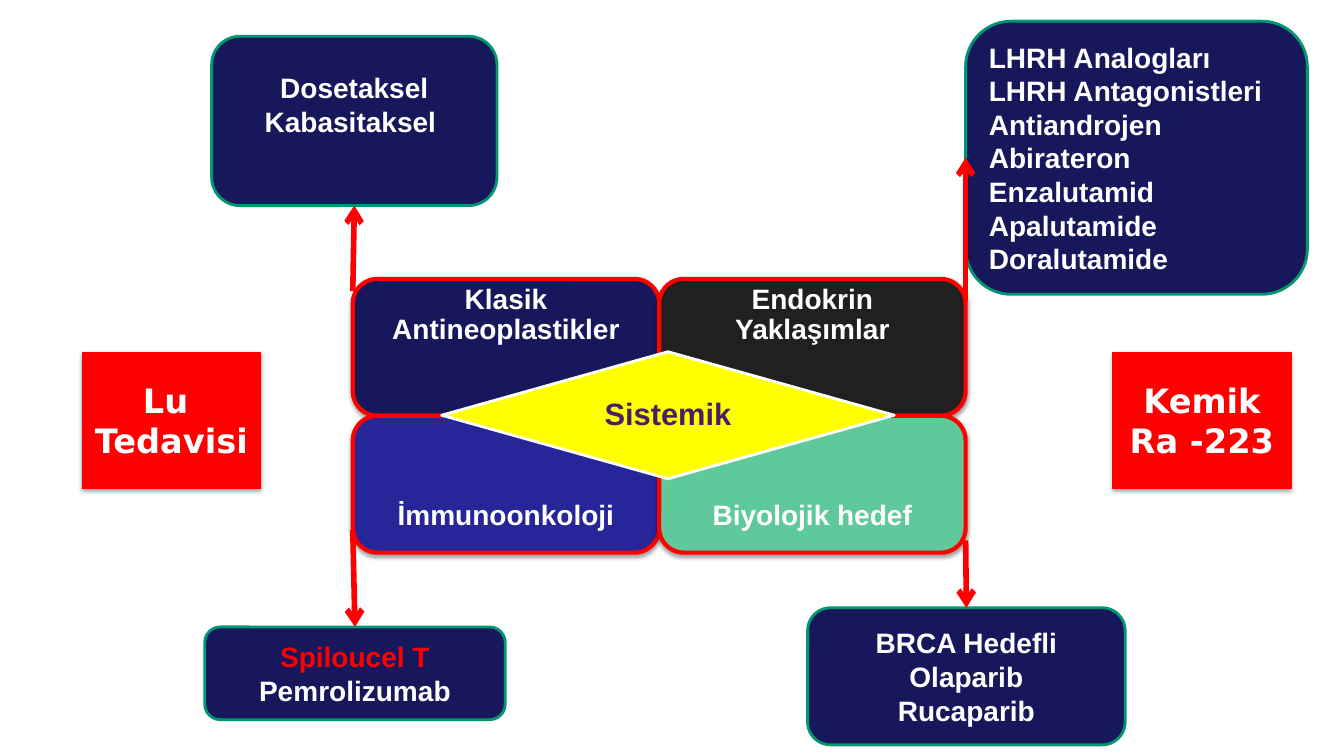
from lxml import etree
from pptx import Presentation
from pptx.dml.color import RGBColor
from pptx.enum.shapes import MSO_CONNECTOR, MSO_SHAPE
from pptx.enum.text import MSO_ANCHOR, PP_ALIGN
from pptx.oxml.ns import qn
from pptx.util import Inches, Pt

ROUNDED = MSO_SHAPE.ROUNDED_RECTANGLE
DIAMOND = MSO_SHAPE.DIAMOND
CALLOUT = MSO_SHAPE.LINE_CALLOUT_1_BORDER_AND_ACCENT_BAR
STRAIGHT = MSO_CONNECTOR.STRAIGHT
LEFT, CENTER = PP_ALIGN.LEFT, PP_ALIGN.CENTER
MIDDLE = MSO_ANCHOR.MIDDLE
TOP_SIDE, LEFT_SIDE, BOTTOM_SIDE = 0, 1, 2
COLORS = {
    "navy": "17175C", "black": "202020", "blue": "262699", "mint": "60C99C",
    "red": "FF0000", "yellow": "FFFF00", "white": "FFFFFF", "green": "009771",
    "purple": "481F67", "shadow": "000000",
}


class TreatmentSlide:
    """Draws the treatment map, with places given in percent of the slide."""

    def __init__(self, presentation):
        self.width = presentation.slide_width
        self.height = presentation.slide_height
        self.slide = presentation.slides.add_slide(presentation.slide_layouts[6])

    def point(self, x, y):
        return round(self.width * x / 100), round(self.height * y / 100)

    def color(self, name):
        return RGBColor.from_string(COLORS[name])

    def block(self, kind, place, fill, line=None, line_width=2):
        left, top, width, height = place
        shape = self.slide.shapes.add_shape(
            kind, *self.point(left, top), *self.point(width, height))
        shape.shadow.inherit = False
        shape.fill.solid()
        shape.fill.fore_color.rgb = self.color(fill)
        if line:
            shape.line.color.rgb = self.color(line)
            shape.line.width = Pt(line_width)
        else:
            shape.line.fill.background()
        return shape

    def label(self, shape, lines, size=20, font="Arial", color="white",
              align=CENTER, spacing=1.0, insets=(0.1, 0.05, 0.1, 0.05)):
        frame = shape.text_frame
        frame.text = "\n".join(lines)
        frame.word_wrap = True
        frame.vertical_anchor = MIDDLE
        (frame.margin_left, frame.margin_top,
         frame.margin_right, frame.margin_bottom) = map(Inches, insets)
        for paragraph in frame.paragraphs:
            paragraph.alignment = align
            paragraph.line_spacing = spacing
            for run in paragraph.runs:
                run.font.name = font
                run.font.size = Pt(size)
                run.font.bold = True
                run.font.color.rgb = self.color(color)

    def cast_shadow(self, shape):
        effects = shape._element.spPr.find(qn("a:effectLst"))
        shadow = etree.SubElement(
            effects, qn("a:outerShdw"), blurRad=str(Pt(3.1)), dist=str(Pt(1.7)),
            dir="5400000", rotWithShape="0")
        tint = etree.SubElement(shadow, qn("a:srgbClr"), val=COLORS["shadow"])
        etree.SubElement(tint, qn("a:alpha"), val="36000")

    def quadrant(self, place, fill, text, insets):
        shape = self.block(ROUNDED, place, fill, "red", 3)
        shape.adjustments[0] = 0.18
        self.cast_shadow(shape)
        self.label(shape, [text], spacing=0.9, insets=insets)

    def drug_box(self, place, lines, **style):
        shape = self.block(ROUNDED, place, "navy", "green")
        self.label(shape, lines, **style)
        return shape

    def side_box(self, place, lines):
        shape = self.block(CALLOUT, place, "red")
        self.cast_shadow(shape)
        self.label(shape, lines, size=24, font="DejaVu Sans")

    def arrow(self, start, target, side):
        begin = self.point(*start)
        connector = self.slide.shapes.add_connector(STRAIGHT, *begin, *begin)
        connector.end_connect(target, side)
        connector.line.color.rgb = self.color("red")
        connector.line.width = Pt(4)
        outline = connector._element.spPr.find(qn("a:ln"))
        etree.SubElement(outline, qn("a:tailEnd"), type="arrow")
        etree.SubElement(connector._element.spPr, qn("a:effectLst"))


def main():
    presentation = Presentation()
    presentation.slide_width = Inches(13.33)
    presentation.slide_height = Inches(7.5)
    treatment = TreatmentSlide(presentation)

    left, top, width, height = 26.25, 36.9, 22.8, 18.1
    right = left + 2 * width
    upper, lower = (0.15, 0, 0.15, 0.63), (0.15, 0.63, 0.15, 0)
    quadrants = [
        ("navy", "Klasik Antineoplastikler"), ("black", "Endokrin Yaklaşımlar"),
        ("blue", "İmmunoonkoloji"), ("mint", "Biyolojik hedef"),
    ]
    for index, (fill, text) in enumerate(quadrants):
        row, column = divmod(index, 2)
        place = (left + column * width, top + row * height, width, height)
        treatment.quadrant(place, fill, text, lower if row else upper)

    center = treatment.block(DIAMOND, (32.86, 46.53, 33.68, 16.8), "yellow", "white")
    treatment.label(center, ["Sistemik"], size=22, color="purple", spacing=0.9,
                    insets=(0, 0, 0, 0))

    endocrine = treatment.drug_box(
        (right, 2.8, 25.43, 36.13),
        ["LHRH Analogları", "LHRH Antagonistleri", "Antiandrojen", "Abirateron",
         "Enzalutamid", "Apalutamide", "Doralutamide"], align=LEFT)
    classic = treatment.drug_box(
        (15.75, 4.8, 21.23, 22.4), ["Dosetaksel", "Kabasitaksel "],
        insets=(0.1, 0.05, 0.1, 0.38))
    immune = treatment.drug_box(
        (15.23, 82.93, 22.36, 12.27), ["Spiloucel T", "Pemrolizumab"])
    first_run = immune.text_frame.paragraphs[0].runs[0]
    first_run.font.color.rgb = treatment.color("red")
    biologic = treatment.drug_box(
        (60.09, 80.4, 23.63, 18.13), ["BRCA Hedefli", "Olaparib", "Rucaparib"])

    treatment.arrow((left, 38.53), classic, BOTTOM_SIDE)
    treatment.arrow((right, 71.47), biologic, TOP_SIDE)
    treatment.arrow((left, 70.13), immune, TOP_SIDE)
    treatment.arrow((right, 39.87), endocrine, LEFT_SIDE)

    treatment.side_box((82.75, 46.53, 13.35, 18.13), ["Kemik", "Ra -223"])
    treatment.side_box((6.08, 46.53, 13.35, 18.13), ["Lu ", "Tedavisi"])
    presentation.save("out.pptx")


if __name__ == "__main__":
    main()
